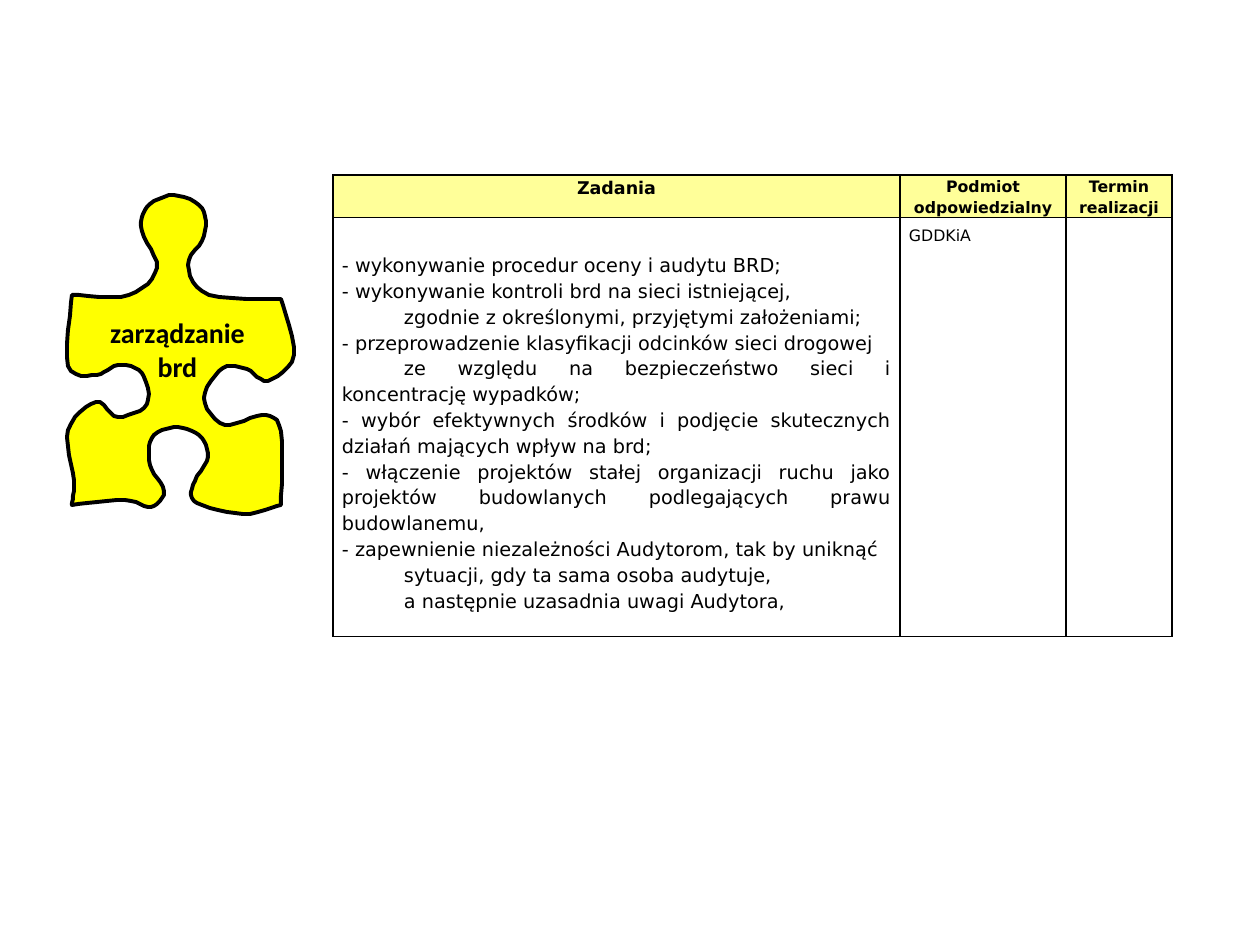
from lxml import etree
from pptx import Presentation
from pptx import util as u
from pptx.dml import color
from pptx.enum import text
from pptx.oxml import ns

PX = 914400 / 126


def px(length):
    return u.Emu(round(length * PX))


def rgb(value):
    return color.RGBColor.from_string(value)


deck = Presentation()
deck.slide_width, deck.slide_height = px(1260), px(945)
page = deck.slides.add_slide(deck.slide_layouts[6])

edges = [
    [(129, 295), (157, 268), (142, 231), (147, 207), (174, 195), (202, 208),
     (204, 236), (188, 265), (209, 295), (281, 299)],
    [(294, 355), (268, 381), (247, 369), (223, 368), (204, 398), (225, 425),
     (262, 415), (281, 431), (281, 505)],
    [(243, 514), (197, 503), (193, 485), (208, 457), (199, 435), (174, 427),
     (152, 438), (150, 465), (164, 491), (151, 507), (125, 500), (72, 505)],
    [(74, 480), (68, 430), (96, 402), (118, 417), (147, 404), (142, 373),
     (118, 365), (97, 375), (68, 366), (72, 295)],
]
corner = edges[-1][-1]
outline = []
steps = 6
for edge in edges:
    knots = [corner, corner, *edge, edge[-1]]
    for before, start, end, after in zip(knots, knots[1:], knots[2:], knots[3:]):
        for step in range(steps):
            t = step / steps
            outline.append(tuple(
                round(b + t * (c - a + t * (2 * a - 5 * b + 4 * c - d
                      + t * (3 * b - 3 * c + d - a))) / 2, 2)
                for a, b, c, d in zip(before, start, end, after)))
    corner = edge[-1]

builder = page.shapes.build_freeform(*outline[0], scale=PX)
builder.add_line_segments(outline[1:], close=True)
puzzle = builder.convert_to_shape()
puzzle.shadow.inherit = False
puzzle.fill.solid()
puzzle.fill.fore_color.rgb = rgb("FFFF00")
puzzle.line.color.rgb = rgb("000000")
puzzle.line.width = u.Pt(2.25)
frame = puzzle.text_frame
frame.text = "zarządzanie brd"
frame.word_wrap = True
frame.vertical_anchor = text.MSO_ANCHOR.MIDDLE
frame.margin_left, frame.margin_right = px(35), px(41)
frame.margin_top, frame.margin_bottom = 0, px(10)
label = frame.paragraphs[0]
label.alignment = text.PP_ALIGN.CENTER
label.font.name = "Calibri"
label.font.size = u.Pt(16)
label.font.bold = True
label.font.color.rgb = rgb("000000")

widths = [567, 166, 106]
heights = [42, 419]
tasks = [
    "- wykonywanie procedur oceny i audytu BRD;",
    "- wykonywanie kontroli brd na sieci istniejącej,",
    "zgodnie z określonymi, przyjętymi założeniami;",
    "- przeprowadzenie klasyfikacji odcinków sieci drogowej",
    "ze względu na bezpieczeństwo sieci i koncentrację wypadków;",
    "- wybór efektywnych środków i podjęcie skutecznych działań mających wpływ na brd;",
    "- włączenie projektów stałej organizacji ruchu jako projektów budowlanych "
    "podlegających prawu budowlanemu,",
    "- zapewnienie niezależności Audytorom, tak by uniknąć",
    "sytuacji, gdy ta sama osoba audytuje,",
    "a następnie uzasadnia uwagi Audytora,",
]
center, left, justify = text.PP_ALIGN.CENTER, text.PP_ALIGN.LEFT, text.PP_ALIGN.JUSTIFY
rows = [
    [(["Zadania"], 10, center, 1.15),
     (["Podmiot", "odpowiedzialny"], 9, center, 1.15),
     (["Termin realizacji"], 9, center, 1.15)],
    [(tasks, 11, justify, 1.15), (["GDDKiA"], 9, left, 1.5), ([""], 9, left, 1.15)],
]
table = page.shapes.add_table(2, 3, px(333), px(175), px(sum(widths)), px(sum(heights))).table
table.first_row = table.horz_banding = False
for column, width in zip(table.columns, widths):
    column.width = px(width)

for row_index, row in enumerate(rows):
    table.rows[row_index].height = px(heights[row_index])
    for column_index, (lines, size, alignment, spacing) in enumerate(row):
        cell = table.cell(row_index, column_index)
        cell.margin_left = cell.margin_right = px(9)
        cell.margin_top = px(34) if lines is tasks else 0
        cell.margin_bottom = 0
        properties = cell._tc.get_or_add_tcPr()
        for side in ("lnL", "lnR", "lnT", "lnB"):
            border = etree.SubElement(properties, ns.qn("a:" + side), w=str(u.Pt(1)))
            fill = etree.SubElement(border, ns.qn("a:solidFill"))
            etree.SubElement(fill, ns.qn("a:srgbClr"), val="000000")
        if row_index == 0:
            cell.fill.solid()
            cell.fill.fore_color.rgb = rgb("FFFF99")
        else:
            cell.fill.background()
        cell.text_frame.text = "\n".join(lines)
        for para in cell.text_frame.paragraphs:
            para.alignment = alignment
            para.line_spacing = spacing
            para.font.size = u.Pt(size)
            if lines is tasks and not para.text.startswith("-"):
                indent = para._p.get_or_add_pPr()
                indent.set("marL", "0")
                indent.set("indent", str(px(62)))
            for span in para.runs:
                span.font.name = "DejaVu Sans"
                span.font.size = u.Pt(size)
                span.font.bold = row_index == 0
                span.font.color.rgb = rgb("000000")

deck.save("out.pptx")
